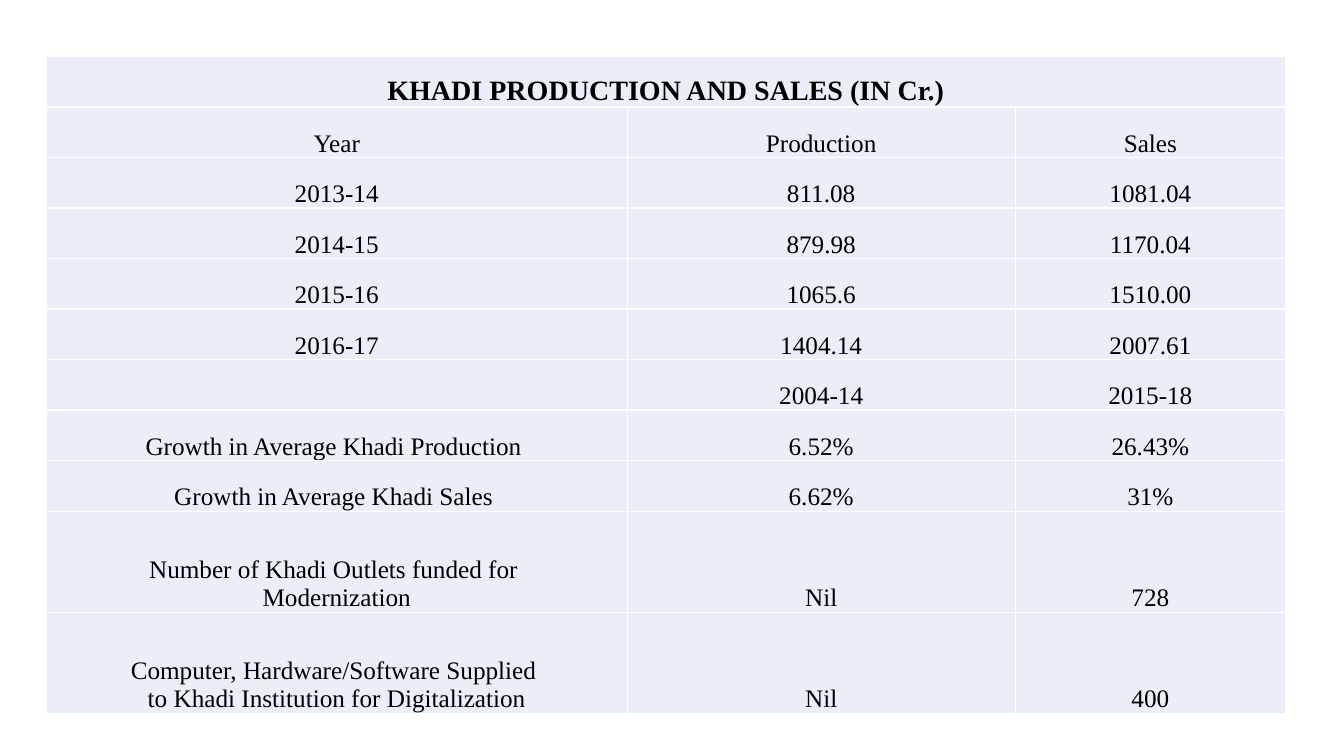
from lxml import etree
from pptx import Presentation, util as u
from pptx.dml.color import RGBColor
from pptx.enum import text
from pptx.oxml.ns import qn

SLIDE_WIDTH, SLIDE_HEIGHT = 13.33, 7.5
LEFT, TOP, HEIGHT = 0.46, 0.56, 6.52
COLUMN_WIDTHS = [5.76, 3.85, 2.68]
TITLE = "KHADI PRODUCTION AND SALES (IN Cr.)"

# Cell texts below the title; "\v" is a line break
ROWS = [
    ["Year", "Production", "Sales"],
    ["2013-14", "811.08", "1081.04"],
    ["2014-15", "879.98", "1170.04"],
    ["2015-16", "1065.6", "1510.00"],
    ["2016-17", "1404.14", "2007.61"],
    ["", "2004-14", "2015-18"],
    ["Growth in Average Khadi Production ", "6.52%", "26.43%"],
    ["Growth in Average Khadi Sales ", "6.62%", "31%"],
    ["Number of Khadi Outlets funded for \vModernization", "Nil", "728"],
    ["Computer, Hardware/Software Supplied \vto Khadi Institution for Digitalization",
     "Nil", "400"],
]


def color(value):
    return RGBColor.from_string(value)


def set_borders(cell, value, points):
    properties = cell._tc.get_or_add_tcPr()
    for index, side in enumerate(("lnL", "lnR", "lnT", "lnB")):
        line = etree.Element(qn("a:" + side), w=str(u.Pt(points)))
        fill = etree.SubElement(line, qn("a:solidFill"))
        etree.SubElement(fill, qn("a:srgbClr"), val=value)
        properties.insert(index, line)


def style_cell(cell):
    cell.fill.solid()
    cell.fill.fore_color.rgb = color("EAEFF7")
    set_borders(cell, "FFFFFF", 1)
    cell.vertical_anchor = text.MSO_ANCHOR.BOTTOM
    cell.margin_left = cell.margin_right = cell.margin_top = u.Inches(0.01)
    cell.margin_bottom = 0


def write_cell(cell, content, size=18, bold=False):
    cell.text = content
    paragraph = cell.text_frame.paragraphs[0]
    paragraph.alignment = text.PP_ALIGN.CENTER
    font = paragraph.font
    font.name, font.size, font.bold = "Times New Roman", u.Pt(size), bold
    font.color.rgb = color("000000")


def add_khadi_table(slide):
    # One unit for each single-line row, two for rows with a line break
    units = [1] + [2 if "\v" in row[0] else 1 for row in ROWS]
    table = slide.shapes.add_table(
        len(units), len(COLUMN_WIDTHS), u.Inches(LEFT), u.Inches(TOP),
        u.Inches(sum(COLUMN_WIDTHS)), u.Inches(HEIGHT)).table
    for column, width in zip(table.columns, COLUMN_WIDTHS):
        column.width = u.Inches(width)
    for row, share in zip(table.rows, units):
        row.height = u.Inches(HEIGHT * share / sum(units))
    for cell in table.iter_cells():
        style_cell(cell)

    # Title across all columns, then the body
    table.cell(0, 0).merge(table.cell(0, len(COLUMN_WIDTHS) - 1))
    write_cell(table.cell(0, 0), TITLE, size=20, bold=True)
    for row_index, row in enumerate(ROWS, start=1):
        for column_index, content in enumerate(row):
            write_cell(table.cell(row_index, column_index), content)


def main():
    presentation = Presentation()
    presentation.slide_width = u.Inches(SLIDE_WIDTH)
    presentation.slide_height = u.Inches(SLIDE_HEIGHT)
    slide = presentation.slides.add_slide(presentation.slide_layouts[6])
    add_khadi_table(slide)
    presentation.save("out.pptx")


if __name__ == "__main__":
    main()
